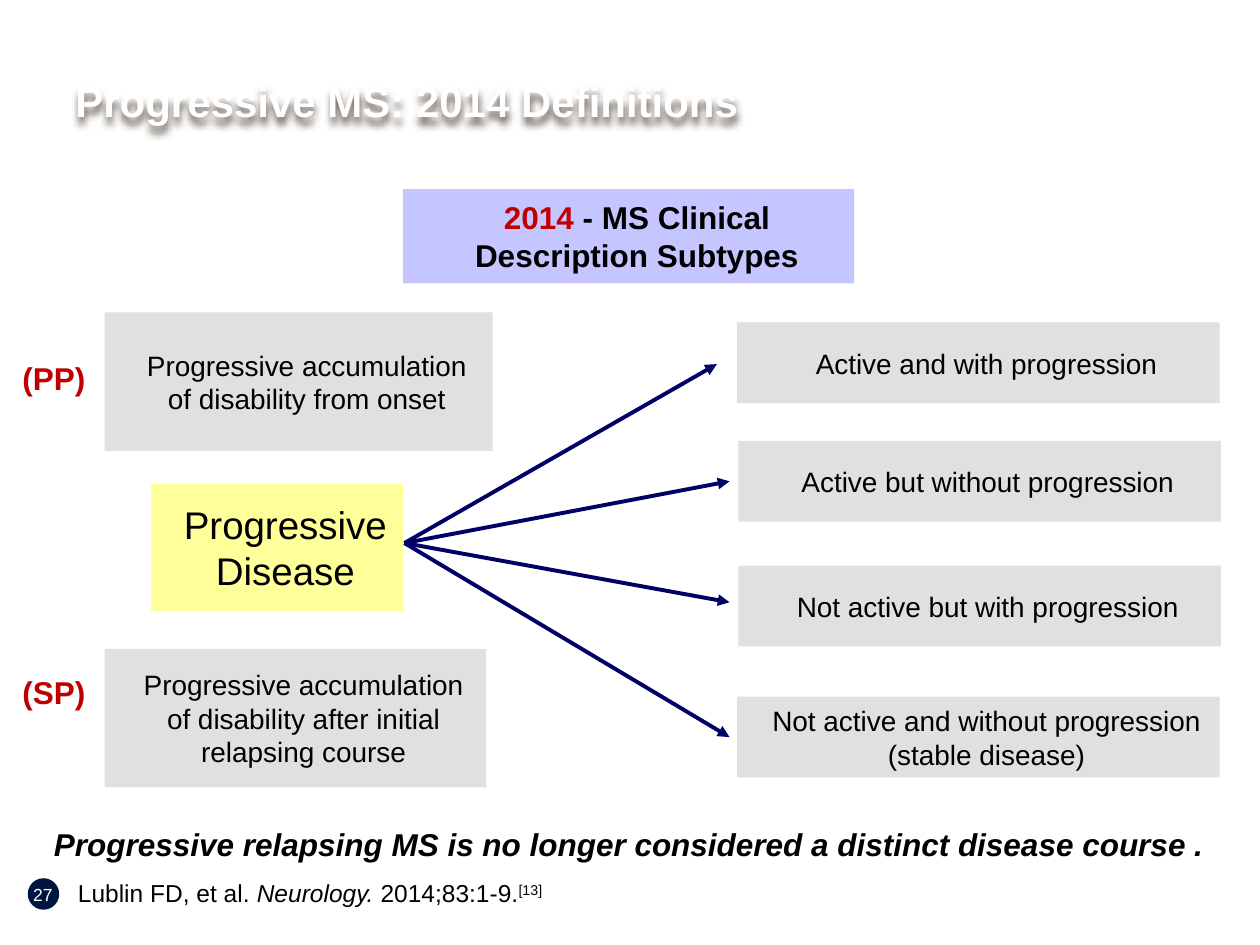
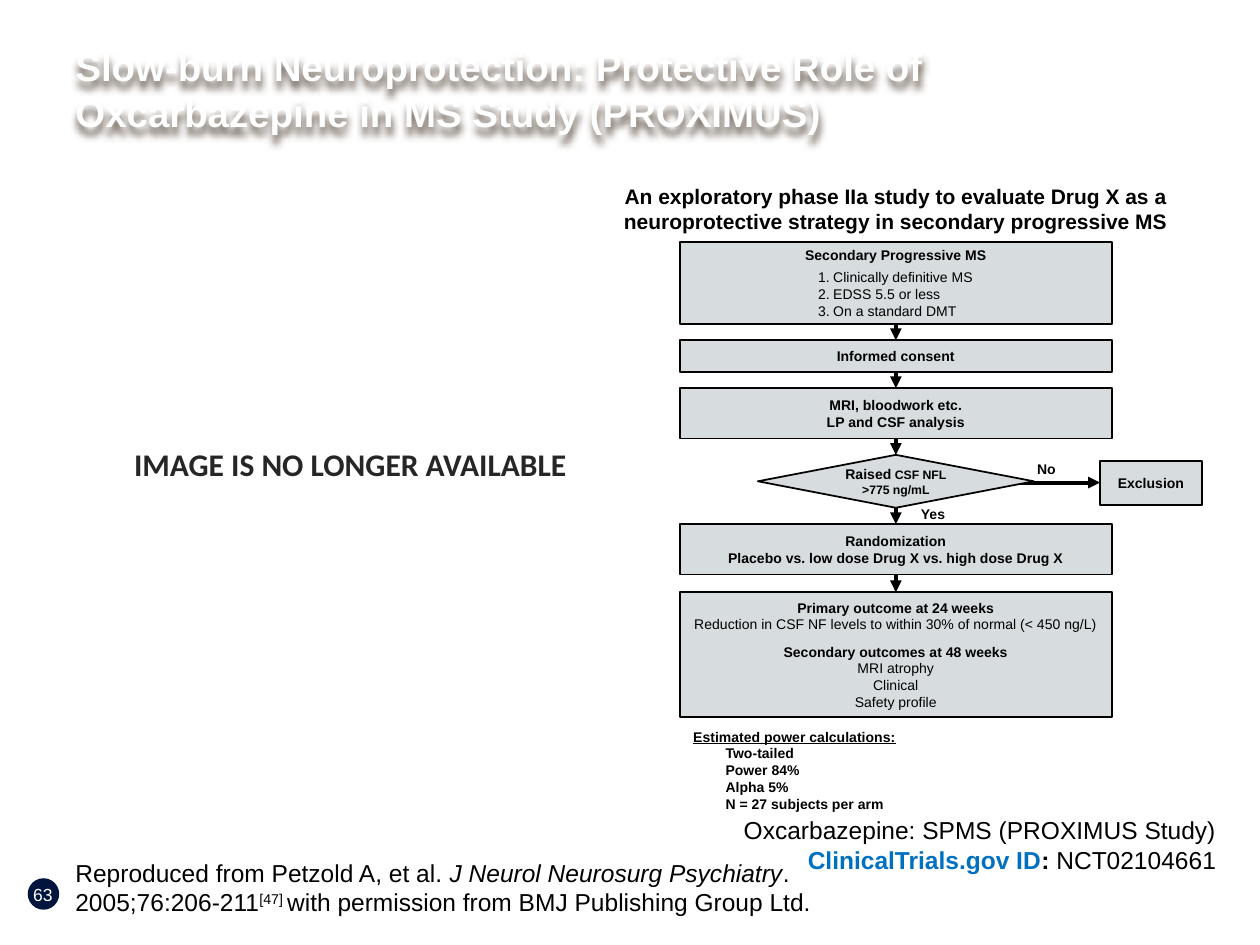
from dataclasses import dataclass

from lxml import etree
from pptx import Presentation
from pptx.dml.color import RGBColor
from pptx.enum.shapes import MSO_CONNECTOR, MSO_SHAPE
from pptx.enum.text import MSO_ANCHOR, PP_ALIGN
from pptx.oxml.ns import qn
from pptx.util import Inches, Pt

LEFT, CENTER, RIGHT = PP_ALIGN.LEFT, PP_ALIGN.CENTER, PP_ALIGN.RIGHT
TOP, MIDDLE = MSO_ANCHOR.TOP, MSO_ANCHOR.MIDDLE
RECTANGLE, DIAMOND, OVAL = MSO_SHAPE.RECTANGLE, MSO_SHAPE.DIAMOND, MSO_SHAPE.OVAL
STRAIGHT = MSO_CONNECTOR.STRAIGHT


@dataclass(frozen=True)
class Theme:
    font: str = "Arial"
    notice_font: str = "Calibri"
    black: str = "000000"
    white: str = "FFFFFF"
    badge: str = "00153E"
    title_shadow: str = "54463A"
    accent: str = "C00000"
    link: str = "0070C0"
    notice: str = "262626"
    definition_fill: str = "E0E0E0"
    disease_fill: str = "FFFF99"
    heading_fill: str = "C5C5FF"
    arrow: str = "000066"
    step_fill: str = "D7DCDF"
    title_size: float = 24
    long_title_size: float = 22
    disease_size: float = 22
    heading_size: float = 18
    body_size: float = 16
    reference_size: float = 14
    subtitle_size: float = 12
    number_size: float = 10
    step_size: float = 8
    detail_size: float = 7


THEME = Theme()


def add_run(paragraph, text, *, size, color=THEME.black, font=THEME.font,
            bold=False, italic=False, underline=False, superscript=False):
    run = paragraph.add_run()
    run.text = text
    run.font.name = font
    run.font.size = Pt(size)
    run.font.bold = bold
    run.font.italic = italic
    run.font.underline = underline
    run.font.color.rgb = RGBColor.from_string(color)
    if superscript:
        run._r.get_or_add_rPr().set("baseline", "30000")


@dataclass
class Line:
    """One paragraph: runs are (text, changed format) pairs or plain text."""
    runs: object
    align: object = None
    margin: float = 0
    indent: float = 0
    before: float = 0
    numbered: bool = False


class Deck:
    def __init__(self, theme):
        self.theme = theme
        self.presentation = Presentation()
        self.presentation.slide_width = Inches(10)
        self.presentation.slide_height = Inches(7.5)
        self.slide = None

    def new_slide(self, number):
        layout = self.presentation.slide_layouts[6]
        self.slide = self.presentation.slides.add_slide(layout)
        self.box((0.22, 6.97, 0.25, 0.25), self.theme.badge, shape_type=OVAL)
        self.text((0.05, 6.9, 0.58, 0.4), number, align=CENTER, anchor=MIDDLE,
                  size=self.theme.number_size, color=self.theme.white)

    def title(self, text, top, size):
        shape = self.text((0.5, top, 7.75, 1.25), text, anchor=MIDDLE,
                          size=size, color=self.theme.white, bold=True)
        effects = etree.SubElement(shape._element.spPr, qn("a:effectLst"))
        shadow = etree.SubElement(effects, qn("a:outerShdw"), blurRad="50800",
                                  dist="50800", dir="5400000", algn="t", rotWithShape="0")
        color = etree.SubElement(shadow, qn("a:srgbClr"), val=self.theme.title_shadow)
        etree.SubElement(color, qn("a:alpha"), val="85000")

    def fill_text(self, shape, content, align, anchor, wrap, margin, text_format):
        frame = shape.text_frame
        frame.word_wrap = wrap
        frame.vertical_anchor = anchor
        lines = content if isinstance(content, list) else [content]
        for index, line in enumerate(lines):
            if not isinstance(line, Line):
                line = Line(line, margin=margin)
            paragraph = frame.paragraphs[0] if index == 0 else frame.add_paragraph()
            paragraph.alignment = align if line.align is None else line.align
            if line.before:
                paragraph.space_before = Pt(line.before)
            properties = paragraph._p.get_or_add_pPr()
            properties.set("marL", str(Inches(line.margin)))
            properties.set("indent", str(Inches(line.indent)))
            if line.numbered:
                etree.SubElement(properties, qn("a:buAutoNum"), type="arabicPeriod")
            runs = [(line.runs, {})] if isinstance(line.runs, str) else line.runs
            for text, changes in runs:
                add_run(paragraph, text, **{**text_format, **changes})

    def text(self, place, content, *, align=LEFT, anchor=TOP, wrap=True, **text_format):
        shape = self.slide.shapes.add_textbox(*map(Inches, place))
        self.fill_text(shape, content, align, anchor, wrap, 0, text_format)
        return shape

    def box(self, place, fill, content=None, *, shape_type=RECTANGLE, outline=None,
            margin=0, **text_format):
        shape = self.slide.shapes.add_shape(shape_type, *map(Inches, place))
        shape.shadow.inherit = False
        shape.fill.solid()
        shape.fill.fore_color.rgb = RGBColor.from_string(fill)
        if outline:
            shape.line.color.rgb = RGBColor.from_string(outline)
            shape.line.width = Pt(1)
        else:
            shape.line.fill.background()
        if content:
            self.fill_text(shape, content, CENTER, MIDDLE, True, margin, text_format)

    def arrow(self, start, end, color):
        connector = self.slide.shapes.add_connector(STRAIGHT, *map(Inches, start + end))
        connector.line.color.rgb = RGBColor.from_string(color)
        connector.line.width = Pt(2.25)
        etree.SubElement(connector.line._get_or_add_ln(), qn("a:tailEnd"), type="triangle")
        etree.SubElement(connector._element.spPr, qn("a:effectLst"))


def build_definitions(deck):
    theme = deck.theme
    margin = 0.13
    deck.new_slide("27")
    deck.title("Progressive MS: 2014 Definitions", 0.17, theme.title_size)
    deck.box((1.2, 3.84, 2, 1.01), theme.disease_fill, ["Progressive", "Disease"],
             margin=margin, size=theme.disease_size)

    courses = [
        ("(PP)", 2.8, 2.48, 3.08, "Progressive accumulation of disability from onset"),
        ("(SP)", 5.29, 5.15, 3.03,
         "Progressive accumulation of disability after initial relapsing course"),
    ]
    for label, label_top, top, width, definition in courses:
        deck.box((0.83, top, width, 1.1), theme.definition_fill, definition,
                 margin=margin, size=theme.body_size)
        deck.text((0.08, label_top, 0.71, 0.4), label, wrap=False,
                  size=theme.heading_size, color=theme.accent, bold=True)

    subtypes = [
        (5.85, 2.56, (5.69, 2.89), "Active and with progression"),
        (5.86, 3.5, (5.79, 3.82), "Active but without progression"),
        (5.86, 4.49, (5.79, 4.78), "Not active but with progression"),
        (5.85, 5.53, (5.79, 5.85),
         ["Not active and without progression", "(stable disease)"]),
    ]
    for left, top, arrow_end, subtype in subtypes:
        deck.box((left, top, 3.83, 0.64), theme.definition_fill, subtype,
                 margin=margin, size=theme.body_size)
        deck.arrow((3.21, 4.31), arrow_end, theme.arrow)

    heading = [("2014 ", {"color": theme.accent}),
               ("- MS Clinical Description Subtypes", {})]
    deck.box((3.2, 1.5, 3.58, 0.75), theme.heading_fill, Line(heading, margin=margin),
             size=theme.heading_size, bold=True)
    deck.text((0.33, 6.5, 9.35, 0.4),
              "Progressive relapsing MS is no longer considered a distinct disease course .",
              wrap=False, size=theme.heading_size, bold=True, italic=True)
    reference = [("Lublin FD, et al. ", {}), ("Neurology.", {"italic": True}),
                 (" 2014;83:1-9.", {}), ("[13]", {"superscript": True})]
    deck.text((0.52, 6.92, 3.9, 0.34), Line(reference), wrap=False,
              size=theme.reference_size)


def build_study(deck):
    theme = deck.theme
    deck.new_slide("63")
    reference = [("Reproduced from Petzold A, et al. ", {}),
                 ("J Neurol Neurosurg Psychiatry", {"italic": True}),
                 (". 2005;76:206-211", {}), ("[47] ", {"superscript": True}),
                 ("with permission from BMJ Publishing Group Ltd.", {})]
    deck.text((0.5, 6.76, 6.17, 0.57), Line(reference), size=theme.reference_size)
    trial = [("ClinicalTrials.gov ID", {"color": theme.link, "bold": True}),
             (": ", {"bold": True}), ("NCT02104661", {})]
    deck.text((5.17, 6.42, 4.58, 0.57),
              ["Oxcarbazepine: SPMS (PROXIMUS Study)", Line(trial)],
              align=RIGHT, size=theme.reference_size)

    regular = {"bold": False}
    detail = {"size": theme.detail_size}
    criteria = ["Clinically definitive MS", "EDSS 5.5 or less", "On a standard DMT"]
    inclusion = ["Secondary Progressive MS"] + [
        Line([(text, regular)], align=LEFT, margin=1.12, indent=-0.12,
             before=0 if index else 3, numbered=True)
        for index, text in enumerate(criteria)]
    outcomes = [
        "Primary outcome at 24 weeks",
        Line([("Reduction in CSF NF levels to within 30% of normal (< 450 ng/L)", regular)]),
        Line("Secondary outcomes at 48 weeks", before=6),
    ] + [Line([(text, regular)]) for text in ("MRI atrophy", "Clinical", "Safety profile")]
    threshold = [Line([("Raised", {}), (" CSF NFL", detail)]),
                 Line([(">775 ng/mL", detail)])]

    center, step_width, diamond_width = 7.11, 3.43, 2.19
    steps = [
        (1.92, 0.65, step_width, RECTANGLE, inclusion),
        (2.7, 0.25, step_width, RECTANGLE, "Informed consent"),
        (3.08, 0.4, step_width, RECTANGLE, ["MRI, bloodwork etc.", "LP and CSF analysis"]),
        (3.61, 0.42, diamond_width, DIAMOND, threshold),
        (4.16, 0.4, step_width, RECTANGLE,
         ["Randomization", "Placebo vs. low dose Drug X vs. high dose Drug X"]),
        (4.7, 0.99, step_width, RECTANGLE, outcomes),
    ]
    for (top, height, *_), (next_top, *_) in zip(steps, steps[1:]):
        deck.arrow((center, top + height), (center, next_top), theme.black)
    deck.arrow((8.07, 3.83), (8.73, 3.83), theme.black)

    step_style = {"outline": theme.black, "size": theme.step_size, "bold": True}
    for top, height, width, shape_type, content in steps:
        deck.box((center - width / 2, top, width, height), theme.step_fill, content,
                 shape_type=shape_type, **step_style)
    deck.box((8.73, 3.66, 0.81, 0.35), theme.step_fill, "Exclusion", **step_style)

    for left, top, answer in [(7.2, 3.96, "Yes"), (8.1, 3.61, "No")]:
        deck.text((left, top, 0.41, 0.24), answer, align=CENTER,
                  size=theme.step_size, bold=True)
    power = ["Two-tailed", "Power 84%", "Alpha 5%", "N = 27 subjects per arm"]
    power_heading = Line([("Estimated power calculations:", {"underline": True})],
                         align=CENTER)
    deck.text((5.28, 5.73, 2.05, 0.77),
              [power_heading] + [Line(text, indent=0.38) for text in power],
              size=theme.step_size, bold=True)
    deck.text((4.65, 1.41, 4.92, 0.5),
              "An exploratory phase IIa study to evaluate Drug X as a "
              "neuroprotective strategy in secondary progressive MS",
              align=CENTER, size=theme.subtitle_size, bold=True)
    deck.title("Slow-burn Neuroprotection: Protective Role of "
               "Oxcarbazepine in MS Study (PROXIMUS)", 0.08, theme.long_title_size)
    deck.text((0.92, 3.48, 3.72, 0.4), "IMAGE IS NO LONGER AVAILABLE", align=CENTER,
              size=theme.heading_size, font=theme.notice_font, color=theme.notice, bold=True)


def main():
    deck = Deck(THEME)
    build_definitions(deck)
    build_study(deck)
    deck.presentation.save("out.pptx")


if __name__ == "__main__":
    main()
